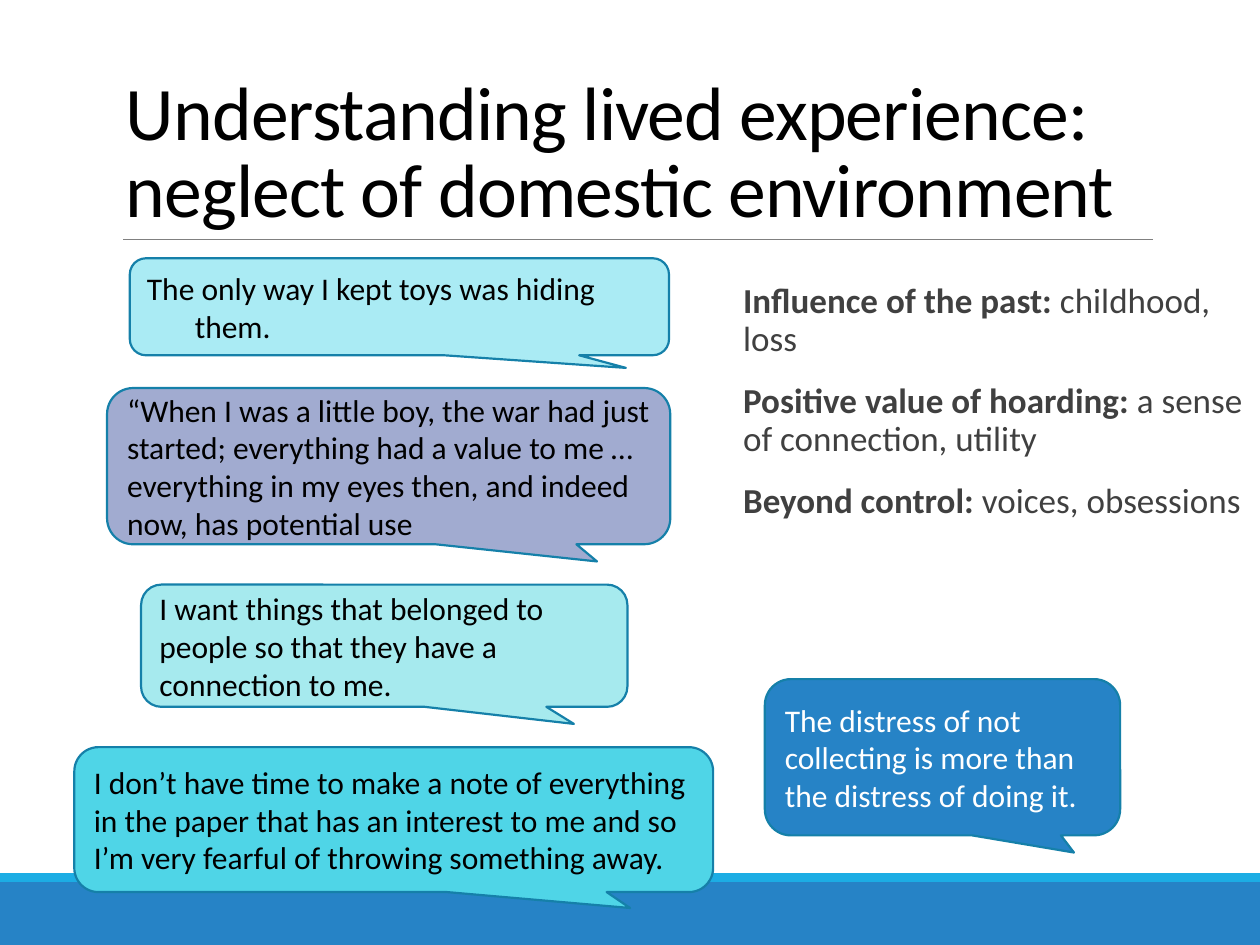
from pptx import Presentation
from pptx.dml.color import RGBColor
from pptx.enum.shapes import MSO_CONNECTOR as Link, MSO_SHAPE as Kind
from pptx.enum.text import MSO_ANCHOR as Anchor, PP_ALIGN as Align
from pptx.oxml.ns import qn
from pptx.util import Inches, Pt
from lxml.etree import SubElement

FONT = "Calibri"
BLUE, SKY, EDGE = "2683C6", "1CADE4", "1580A9"
BLACK, WHITE, GREY = "000000", "FFFFFF", "404040"


def color(code):
    return RGBColor.from_string(code)


def add_run(para, text, size, code, bold=False):
    run = para.add_run()
    run.text = text
    font = run.font
    font.name, font.size, font.bold = FONT, Pt(size), bold
    font.color.rgb = color(code)
    return run


def add_block(slide, kind, box, fill, edge=None):
    shape = slide.shapes.add_shape(kind, *map(Inches, box))
    shape.shadow.inherit = False
    shape.fill.solid()
    shape.fill.fore_color.rgb = color(fill)
    if edge:
        shape.line.color.rgb = color(edge)
        shape.line.width = Pt(1.25)
    else:
        shape.line.fill.background()
    return shape


def add_text(slide, box):
    frame = slide.shapes.add_textbox(*map(Inches, box)).text_frame
    frame.word_wrap = True
    return frame


def add_footer(slide, box):
    # Dark band with a thin light strip above it
    left, top, width, height = box
    strip = 0.07
    add_block(slide, Kind.RECTANGLE, (left, top + strip, width, height - strip), BLUE)
    add_block(slide, Kind.RECTANGLE, (left, top, width, strip), SKY)


def add_title(slide, box, text):
    left, top, width, height = box
    frame = add_text(slide, box)
    frame.vertical_anchor = Anchor.BOTTOM
    para = frame.paragraphs[0]
    para.line_spacing = 0.85
    run = add_run(para, text, 43.2, BLACK)
    run.font._element.set("spc", "-50")

    # Rule under the title
    base = top + height
    ends = left + 0.08, base, left + width, base
    rule = slide.shapes.add_connector(Link.STRAIGHT, *map(Inches, ends))
    rule.line.color.rgb = color("808080")
    rule.line.width = Pt(0.5)
    SubElement(rule._element.spPr, qn("a:effectLst"))


def add_themes(slide, box, themes):
    frame = add_text(slide, box)
    frame.margin_left = Inches(0.1)
    frame.margin_right = 0
    for i, (head, rest) in enumerate(themes):
        para = frame.add_paragraph() if i else frame.paragraphs[0]
        para.line_spacing = 0.9
        para.space_before = Pt(12 if i else 0)
        para.space_after = Pt(2)
        add_run(para, head, 20, GREY, True)
        add_run(para, rest, 20, GREY)


def add_quote(slide, box, text, fill, ink=BLACK, tail=(0.37, 0.61), hang=0):
    shape = add_block(slide, Kind.ROUNDED_RECTANGULAR_CALLOUT, box, fill, EDGE)
    for i, value in enumerate(tail):
        shape.adjustments[i] = value
    frame = shape.text_frame
    frame.word_wrap = True
    frame.vertical_anchor = Anchor.MIDDLE
    para = frame.paragraphs[0]
    para.alignment = Align.LEFT
    if hang:
        props = para._p.get_or_add_pPr()
        props.set("marL", str(Inches(hang)))
        props.set("indent", str(-Inches(hang)))
    add_run(para, text, 18, ink)


def main():
    deck = Presentation()
    deck.slide_width, deck.slide_height = Inches(10), Inches(7.5)
    slide = deck.slides.add_slide(deck.slide_layouts[6])

    add_footer(slide, (0, 6.93, 10, 0.57))
    add_title(slide, (0.9, 0.31, 8.25, 1.59),
              "Understanding lived experience: neglect of domestic environment")
    add_themes(slide, (5.8, 2.2, 4.2, 4.44), [
        ("Influence of the past:", " childhood, loss"),
        ("Positive value of hoarding: ", "a sense of connection, utility"),
        ("Beyond control: ", "voices, obsessions"),
    ])

    # Quotes down the left side
    add_quote(slide, (1.03, 2.05, 4.28, 0.77),
              "The only way I kept toys was hiding them.",
              "AAEBF4", tail=(0.42, 0.63), hang=0.38)
    add_quote(slide, (0.85, 3.08, 4.47, 1.24),
              "“When I was a little boy, the war had just started; everything "
              "had a value to me … everything in my eyes then, and indeed now, "
              "has potential use", "A1ABD0")
    add_quote(slide, (1.12, 4.64, 3.86, 0.97),
              "I want things that belonged to people so that they have a "
              "connection to me.", "A6EAEE", tail=(0.39, 0.64))
    add_quote(slide, (0.59, 5.93, 5.07, 1.15),
              "I don’t have time to make a note of everything in the paper that "
              "has an interest to me and so I’m very fearful of throwing "
              "something away.", "4FD5E7")

    # Quote on the right
    add_quote(slide, (6.07, 5.39, 2.82, 1.24),
              "The distress of not collecting is more than the distress of "
              "doing it.", BLUE, WHITE)

    deck.save("out.pptx")


if __name__ == "__main__":
    main()
